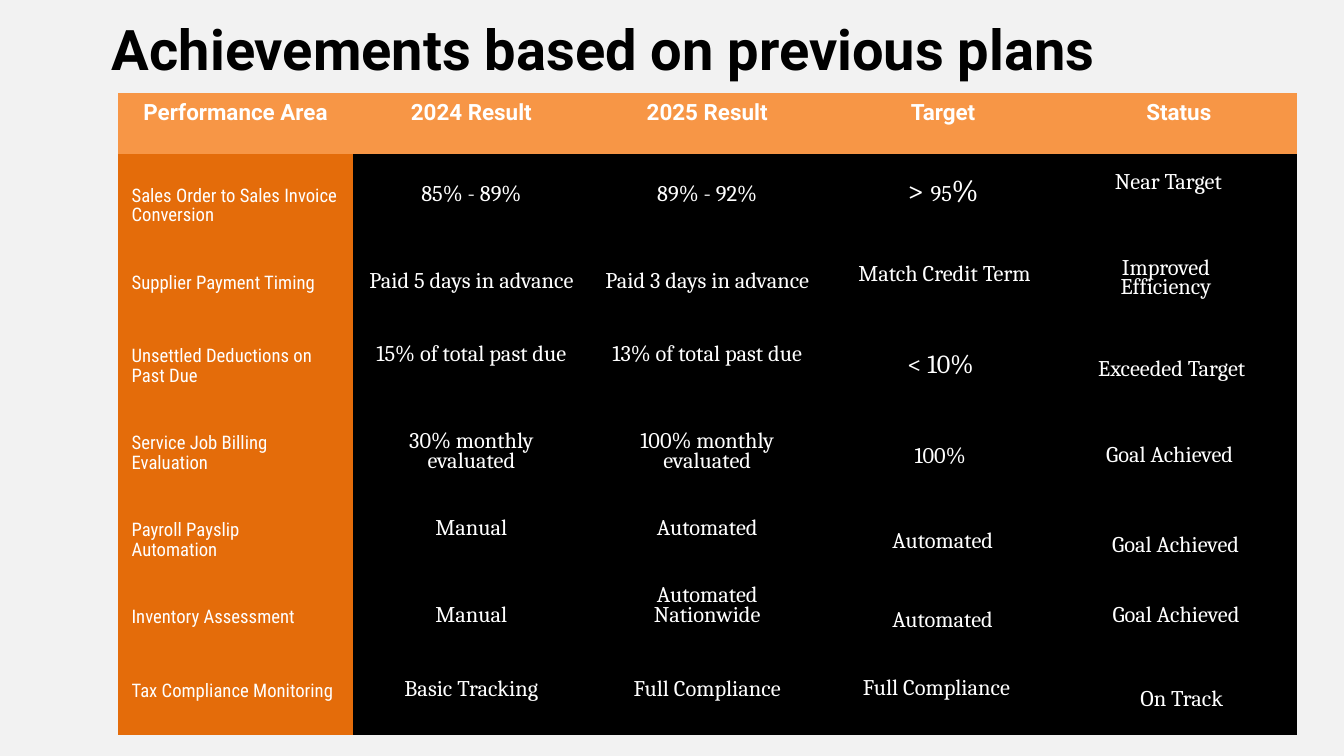
from enum import Enum

from pptx import Presentation
from pptx.dml.color import RGBColor
from pptx.enum.shapes import MSO_SHAPE
from pptx.enum.text import MSO_ANCHOR, PP_ALIGN
from pptx.util import Pt


class Theme:
    BACKGROUND = RGBColor.from_string("F2F2F2")
    HEADER = RGBColor.from_string("F79646")
    AREA = RGBColor.from_string("E46C0A")
    BLACK = RGBColor.from_string("000000")
    WHITE = RGBColor.from_string("FFFFFF")
    HEADING, AREA_FONT, BODY = "Roboto", "Roboto Condensed", "Cambria"
    TITLE_SIZE, LARGE_SIZE, EMPHASIS_SIZE, BODY_SIZE, AREA_SIZE = 60, 32, 28, 24, 20


class Column(Enum):
    AREA = 0
    TARGET = 3


LINE = 21
PADDING = 15


def write(frame, text, font=Theme.BODY, size=Theme.BODY_SIZE, color=Theme.WHITE,
          align=PP_ALIGN.CENTER, line=LINE, bold=False):
    """Fill a text frame with one paragraph per line of text."""
    frame.word_wrap = True
    frame.text = text
    for paragraph in frame.paragraphs:
        paragraph.alignment = align
        paragraph.line_spacing = Pt(line)
        paragraph.font.name = font
        paragraph.font.size = Pt(size)
        paragraph.font.bold = bold
        paragraph.font.color.rgb = color


def clear_margins(frame):
    frame.margin_left = frame.margin_right = frame.margin_top = frame.margin_bottom = 0
    frame.vertical_anchor = MSO_ANCHOR.TOP


presentation = Presentation()
presentation.slide_width, presentation.slide_height = Pt(1440), Pt(810)
slide = presentation.slides.add_slide(presentation.slide_layouts[6])
slide.background.fill.solid()
slide.background.fill.fore_color.rgb = Theme.BACKGROUND

# Results table
headers = ["Performance Area", "2024 Result", "2025 Result", "Target", "Status"]
results = [
    ("Sales Order to Sales Invoice Conversion", "85% - 89%", "89% - 92%"),
    ("Supplier Payment Timing", "Paid 5 days in advance", "Paid 3 days in advance"),
    ("Unsettled Deductions on Past Due", "15% of total past due", "13% of total past due"),
    ("Service Job Billing Evaluation", "30% monthly evaluated", "100% monthly evaluated"),
    ("Payroll Payslip\nAutomation", "Manual", "Automated"),
    ("Inventory Assessment", "Manual", "Automated Nationwide"),
    ("Tax Compliance Monitoring", "Basic Tracking", "Full Compliance"),
]
row_heights = [65.5, 93, 79, 93, 93, 93, 79, 93]
column_width = 252.7

achievements = slide.shapes.add_table(
    len(row_heights), len(headers), Pt(126), Pt(99.2),
    Pt(column_width * len(headers)), Pt(sum(row_heights)))
table = achievements.table
table.first_row = table.horz_banding = False
no_style_no_grid = "{2D5ABB26-0587-4C30-8999-92F81FD0307C}"
achievements._element.xpath(".//a:tableStyleId")[0].text = no_style_no_grid

for column in table.columns:
    column.width = Pt(column_width)
for row, height in zip(table.rows, row_heights):
    row.height = Pt(height)

for row_number, texts in enumerate([headers, *results]):
    for column_number in range(len(headers)):
        cell = table.cell(row_number, column_number)
        cell.margin_left = cell.margin_right = cell.margin_bottom = Pt(PADDING)
        cell.margin_top = Pt(PADDING if row_number == 0 else PADDING + LINE)
        cell.fill.solid()
        if row_number == 0:
            cell.fill.fore_color.rgb = Theme.HEADER
            write(cell.text_frame, texts[column_number], Theme.HEADING, bold=True)
        elif column_number == Column.AREA.value:
            cell.fill.fore_color.rgb = Theme.AREA
            write(cell.text_frame, texts[column_number], Theme.AREA_FONT,
                  Theme.AREA_SIZE, align=PP_ALIGN.LEFT)
        else:
            cell.fill.fore_color.rgb = Theme.BLACK
            if column_number < len(texts):
                write(cell.text_frame, texts[column_number])

# The nationwide result starts one line higher than its neighbours
table.cell(6, 2).margin_top = Pt(PADDING)

conversion_target = table.cell(1, Column.TARGET.value)
conversion_target.margin_top = Pt(37.4)
write(conversion_target.text_frame, "> ", size=Theme.LARGE_SIZE, line=22.4)
for part, size in (("95", Theme.BODY_SIZE), ("%", Theme.LARGE_SIZE)):
    run = conversion_target.text_frame.paragraphs[0].add_run()
    run.text = part
    run.font.size = Pt(size)

# Title
title = slide.shapes.add_textbox(Pt(120), Pt(10.8), Pt(1294.6), Pt(77.8)).text_frame
clear_margins(title)
write(title, "Achievements based on previous plans", Theme.HEADING, Theme.TITLE_SIZE,
      Theme.BLACK, PP_ALIGN.LEFT, line=77, bold=True)

# Targets and statuses placed over the table: text, left, top, width, height, size
labels = [
    ("Near Target", 1193.8, 186.5, 115.9, 42.5, Theme.BODY_SIZE),
    ("Match Credit Term", 918, 285.8, 187.9, 42.5, Theme.BODY_SIZE),
    ("< 10%", 948.2, 385.2, 118.8, 34.6, Theme.EMPHASIS_SIZE),
    ("100%", 959.8, 480.2, 95, 45.4, Theme.BODY_SIZE),
    ("Goal Achieved", 1154.9, 479.5, 196.6, 31, Theme.BODY_SIZE),
    ("Exceeded Target", 1154.9, 387.4, 200.9, 30.2, Theme.BODY_SIZE),
    ("Automated", 948.2, 571.7, 123.8, 51.1, Theme.BODY_SIZE),
    ("Goal Achieved", 1182.2, 575.3, 154.8, 21.6, Theme.BODY_SIZE),
    ("Automated", 934.6, 655.9, 150.5, 40.3, Theme.BODY_SIZE),
    ("Goal Achieved", 1173.6, 650.9, 172.8, 36.7, Theme.BODY_SIZE),
    ("Full Compliance", 922.3, 728.6, 162, 46.8, Theme.BODY_SIZE),
    ("On Track", 1195.9, 740.9, 140.4, 40.3, Theme.BODY_SIZE),
]
for text, left, top, width, height, size in labels:
    label = slide.shapes.add_textbox(Pt(left), Pt(top), Pt(width), Pt(height)).text_frame
    clear_margins(label)
    write(label, text, size=size)

payment_status = slide.shapes.add_shape(
    MSO_SHAPE.RECTANGLE, Pt(1152), Pt(278.6), Pt(194.4), Pt(58.3))
payment_status.shadow.inherit = False
payment_status.fill.solid()
payment_status.fill.fore_color.rgb = Theme.BLACK
payment_status.line.fill.background()
clear_margins(payment_status.text_frame)
write(payment_status.text_frame, "Improved Efficiency")

presentation.save("out.pptx")
